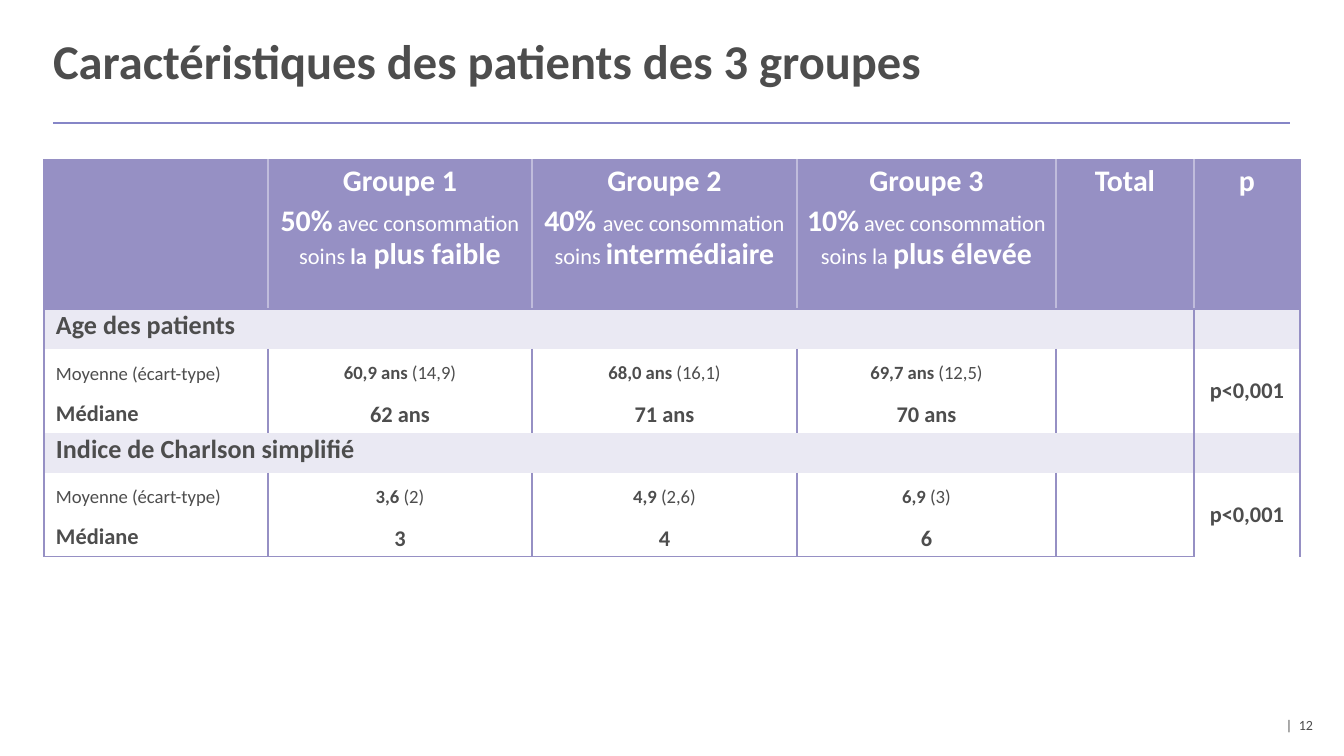
from lxml.etree import SubElement
from pptx import Presentation
from pptx.dml.color import RGBColor
from pptx.enum.shapes import MSO_CONNECTOR
from pptx.enum.text import MSO_ANCHOR, PP_ALIGN
from pptx.oxml.ns import qn
from pptx.util import Emu, Pt

PX_PER_INCH = 134.4
FONT = "Calibri"
WHITE = RGBColor(0xFF, 0xFF, 0xFF)
GREY = RGBColor(0x4D, 0x4D, 0x4D)
RULE = RGBColor(0x86, 0x86, 0xC7)
PURPLE = RGBColor(0x96, 0x90, 0xC4)
LILAC = RGBColor(0xC0, 0xBC, 0xDC)
PALE = RGBColor(0xEA, 0xE9, 0xF3)

COLUMN_WIDTHS = [224, 264, 265, 259, 138, 106]
HEADER_HEIGHT = 149
SECTION_HEIGHTS = [40, 48, 36]  # heading, mean, median

# Each run is (text, size, bold)
GROUPS = [
    ("Groupe 1", [("50%", 16, True), (" ", 12, True),
                  ("avec consommation soins", 12, False),
                  (" la", 12, True), (" plus faible", 16, True)]),
    ("Groupe 2", [("40% ", 16, True), ("avec consommation soins ", 12, False),
                  ("intermédiaire", 16, True)]),
    ("Groupe 3", [("10%", 16, True), (" avec consommation soins la ", 12, False),
                  ("plus élevée", 16, True)]),
    ("Total", []),
    ("p", []),
]
# Heading, means with standard deviations, medians, p value
SECTIONS = [
    ("Age des patients",
     [("60,9 ans", "(14,9)"), ("68,0 ans", "(16,1)"), ("69,7 ans", "(12,5)")],
     ["62 ans", "71 ans", "70 ans"], "p<0,001"),
    ("Indice de Charlson simplifié",
     [("3,6", "(2)"), ("4,9", "(2,6)"), ("6,9", "(3)")],
     ["3", "4", "6"], "p<0,001"),
]


def px(length):
    return Emu(round(length * 914400 / PX_PER_INCH))


def set_font(font, size, color, bold=False):
    font.name = FONT
    font.size = Pt(size)
    font.bold = bold
    font.color.rgb = color


def write_runs(paragraph, runs, color):
    """Format the paragraph by its first run, and only the runs that differ."""
    _, size, bold = runs[0]
    set_font(paragraph.font, size, color, bold)
    for text, run_size, run_bold in runs:
        run = paragraph.add_run()
        run.text = text
        if run_size != size:
            run.font.size = Pt(run_size)
        if run_bold != bold:
            run.font.bold = run_bold


def set_margins(box, left, top, right, bottom):
    box.margin_left, box.margin_top = px(left), px(top)
    box.margin_right, box.margin_bottom = px(right), px(bottom)


def set_borders(cell, **colors):
    properties = cell._tc.get_or_add_tcPr()
    for side in "LRTB":
        line = SubElement(properties, qn(f"a:ln{side}"), w=str(Pt(0.75)))
        if side in colors:
            fill = SubElement(line, qn("a:solidFill"))
            SubElement(fill, qn("a:srgbClr"), val=str(colors[side]))
        else:
            SubElement(line, qn("a:noFill"))


def style_cell(cell, fill, **borders):
    set_borders(cell, **borders)
    cell.fill.solid()
    cell.fill.fore_color.rgb = fill
    set_margins(cell, 0, 0, 0, 0)
    set_font(cell.text_frame.paragraphs[0].font, 10, GREY)


def style_grid(table):
    last_row, last_column = len(table.rows) - 1, len(table.columns) - 1
    for row in range(last_row + 1):
        for column in range(last_column + 1):
            cell = table.cell(row, column)
            if row == 0:
                style_cell(cell, PURPLE, T=PURPLE, B=PURPLE,
                           L=LILAC if column else PURPLE,
                           R=LILAC if column < last_column else PURPLE)
                continue
            borders = {"L": PURPLE, "R": PURPLE}
            if row == 1:
                borders["T"] = PURPLE
            if row == last_row:
                borders["B"] = PURPLE
            is_heading = (row - 1) % len(SECTION_HEIGHTS) == 0
            style_cell(cell, PALE if is_heading else WHITE, **borders)


def write_header(cell, name, description):
    set_margins(cell, 8, 12, 8, 8)
    title = cell.text_frame.paragraphs[0]
    title.alignment = PP_ALIGN.CENTER
    title.line_spacing = Pt(15)
    write_runs(title, [(name, 16, True)], WHITE)
    if description:
        detail = cell.text_frame.add_paragraph()
        detail.alignment = PP_ALIGN.CENTER
        detail.line_spacing = Pt(18)
        detail.space_before = Pt(3)
        write_runs(detail, description, WHITE)


def write_label(cell, text, size, bold):
    set_margins(cell, 12, 5, 4, 5)
    cell.vertical_anchor = MSO_ANCHOR.MIDDLE
    label = cell.text_frame.paragraphs[0]
    label.line_spacing = Pt(13)
    write_runs(label, [(text, size, bold)], GREY)


def write_value(cell, runs):
    set_margins(cell, 8, 0, 8, 0)
    cell.vertical_anchor = MSO_ANCHOR.MIDDLE
    value = cell.text_frame.paragraphs[0]
    value.alignment = PP_ALIGN.CENTER
    write_runs(value, runs, GREY)


def write_section(table, top, heading, means, medians, p_value):
    table.cell(top, 0).merge(table.cell(top, 4))
    table.cell(top + 1, 5).merge(table.cell(top + 2, 5))
    write_label(table.cell(top, 0), heading, 14, True)
    write_label(table.cell(top + 1, 0), "Moyenne (écart-type)", 10, False)
    write_label(table.cell(top + 2, 0), "Médiane", 12, True)
    for column, ((mean, deviation), median) in enumerate(zip(means, medians), 1):
        write_value(table.cell(top + 1, column),
                    [(f"{mean} ", 10, True), (deviation, 10, False)])
        write_value(table.cell(top + 2, column), [(median, 12, True)])
    write_value(table.cell(top + 1, 5), [(p_value, 12, True)])


def add_patient_table(slide):
    heights = [HEADER_HEIGHT] + SECTION_HEIGHTS * len(SECTIONS)
    table = slide.shapes.add_table(
        len(heights), len(COLUMN_WIDTHS), px(44), px(160),
        px(sum(COLUMN_WIDTHS)), px(sum(heights))).table
    table.first_row = table.horz_banding = False
    for column, width in zip(table.columns, COLUMN_WIDTHS):
        column.width = px(width)
    for row, height in zip(table.rows, heights):
        row.height = px(height)
    style_grid(table)
    for column, (name, description) in enumerate(GROUPS, 1):
        write_header(table.cell(0, column), name, description)
    for index, section in enumerate(SECTIONS):
        write_section(table, 1 + index * len(SECTION_HEIGHTS), *section)


def add_title(slide, text):
    title = slide.shapes.title
    title.left, title.top, title.width, title.height = map(px, (53, 17, 1258, 93))
    frame = title.text_frame
    set_margins(frame, 0, 0, 0, 0)
    frame.vertical_anchor = MSO_ANCHOR.MIDDLE
    paragraph = frame.paragraphs[0]
    paragraph.alignment = PP_ALIGN.LEFT
    paragraph.line_spacing = 0.9
    write_runs(paragraph, [(text, 26, True)], GREY)


def add_rule(slide):
    rule = slide.shapes.add_connector(
        MSO_CONNECTOR.STRAIGHT, px(53), px(123), px(1290), px(123))
    rule.line.color.rgb = RULE
    rule.line.width = Pt(1)
    SubElement(rule._element.spPr, qn("a:effectLst"))


def add_page_number(slide, text):
    frame = slide.shapes.add_textbox(px(1286), px(716), px(71), px(26)).text_frame
    frame.word_wrap = True
    set_margins(frame, 0, 0, 0, 0)
    write_runs(frame.paragraphs[0], [(text, 7.5, False)], GREY)


def main():
    deck = Presentation()
    deck.slide_width, deck.slide_height = px(1344), px(756)
    slide = deck.slides.add_slide(deck.slide_layouts[5])
    add_rule(slide)
    add_title(slide, "Caractéristiques des patients des 3 groupes")
    add_patient_table(slide)
    add_page_number(slide, "|  12")
    deck.save("out.pptx")


if __name__ == "__main__":
    main()
